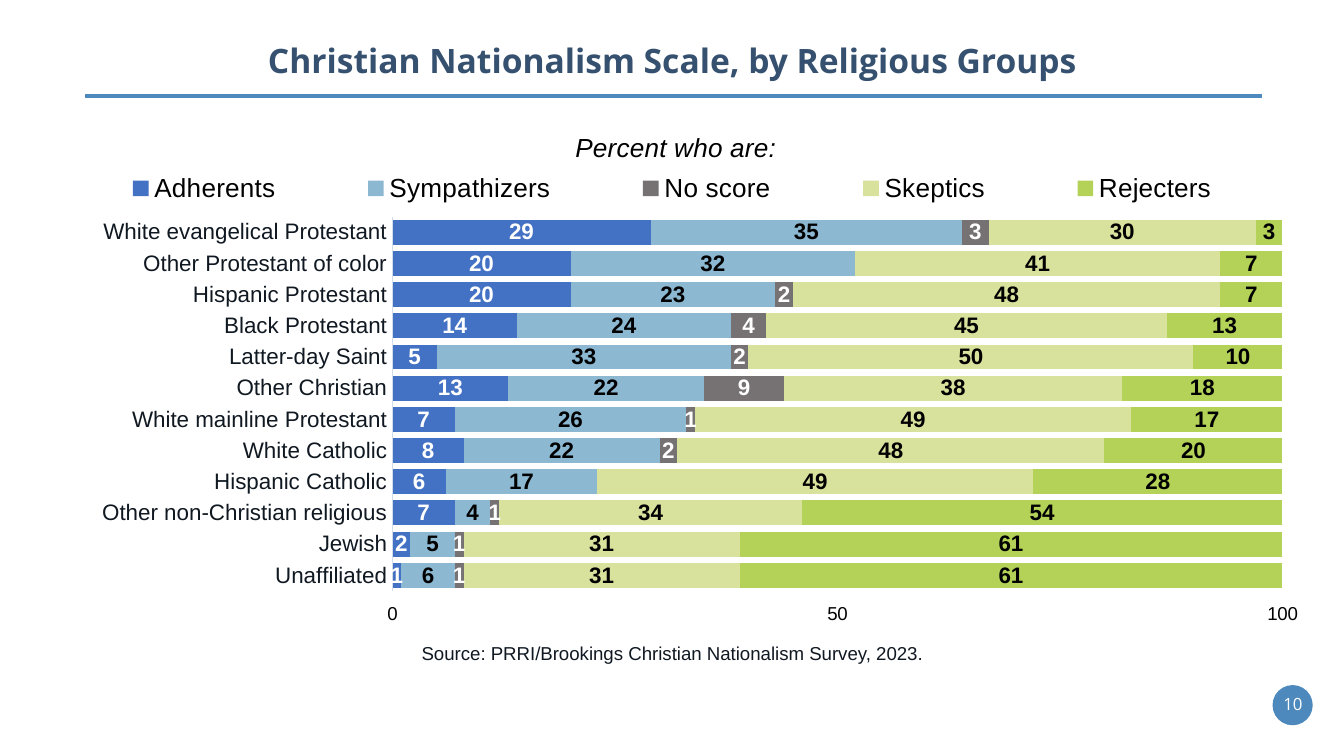
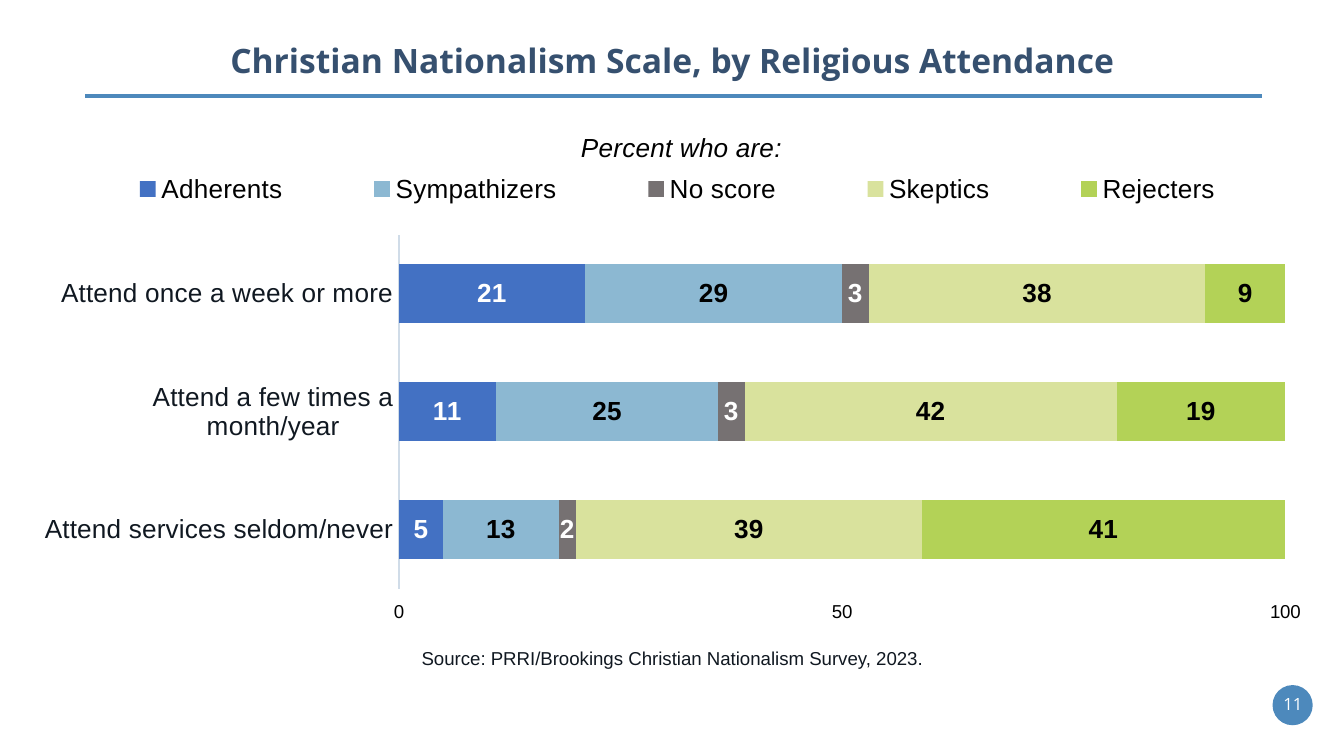
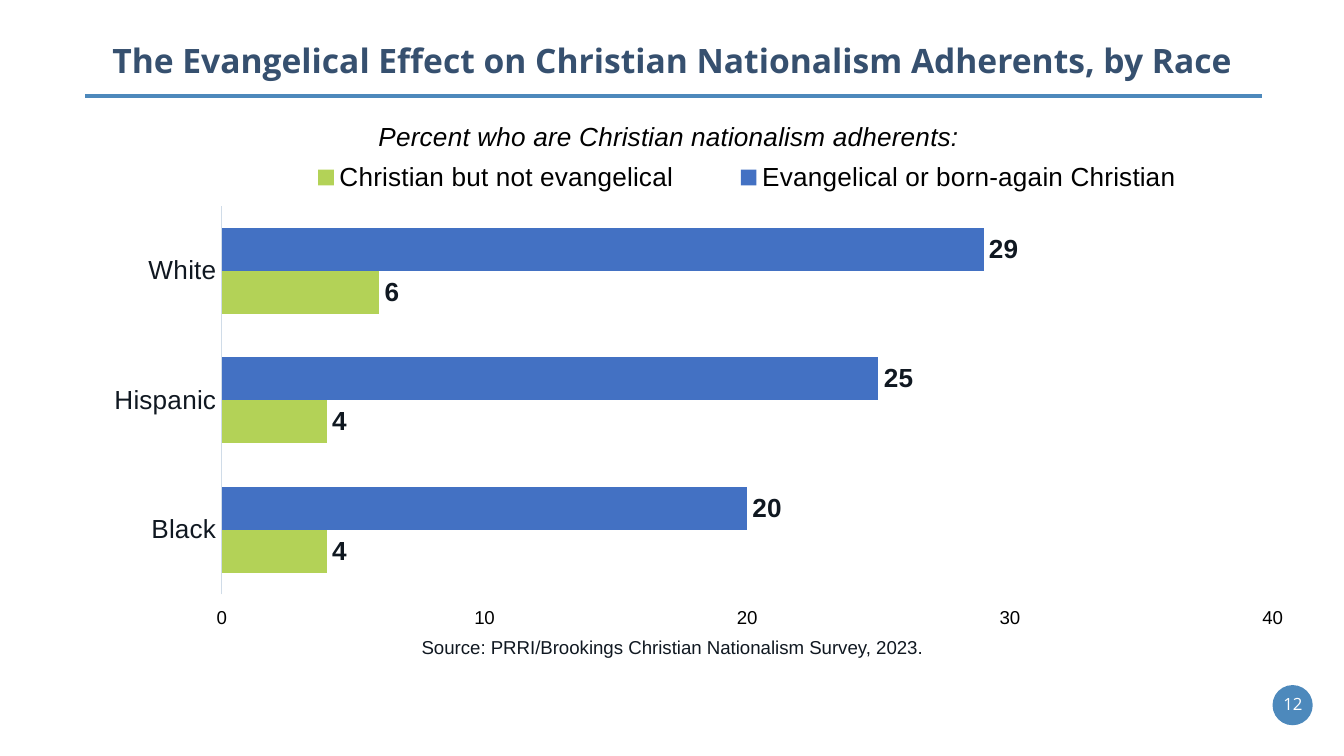
from lxml import etree
from pptx import Presentation
from pptx.chart.data import CategoryChartData
from pptx.dml.color import RGBColor
from pptx.enum import chart as ch, shapes, text
from pptx.oxml.ns import qn
from pptx.util import Cm, Pt

# Shared colours and fonts
WHITE = RGBColor(0xFF, 0xFF, 0xFF)
BLACK = RGBColor(0, 0, 0)
INK = RGBColor(0x10, 0x18, 0x21)
NAVY = RGBColor(0x36, 0x50, 0x6F)
STEEL = RGBColor(0x4D, 0x89, 0xBC)
AXIS = RGBColor(0xD0, 0xDC, 0xE8)
BLUE = RGBColor(0x43, 0x71, 0xC3)
SKY = RGBColor(0x8C, 0xB8, 0xD2)
GREY = RGBColor(0x76, 0x71, 0x72)
PALE_GREEN = RGBColor(0xD9, 0xE2, 0x9D)
GREEN = RGBColor(0xB3, 0xD2, 0x57)
HEAD_FONT, BODY_FONT = "Open Sans", "Arial"

SOURCE = "Source: PRRI/Brookings Christian Nationalism Survey, 2023."
CHART_BOX = (0.84, 2.06, 23.93, 10.8)

# Scale groups: name, bar colour, label colour
SCALE = [
    ("Adherents", BLUE, WHITE),
    ("Sympathizers", SKY, BLACK),
    ("No score", GREY, WHITE),
    ("Skeptics", PALE_GREEN, BLACK),
    ("Rejecters", GREEN, BLACK),
]
RELIGIOUS_GROUPS = {
    "White evangelical Protestant": (29, 35, 3, 30, 3),
    "Other Protestant of color": (20, 32, 0, 41, 7),
    "Hispanic Protestant": (20, 23, 2, 48, 7),
    "Black Protestant": (14, 24, 4, 45, 13),
    "Latter-day Saint": (5, 33, 2, 50, 10),
    "Other Christian": (13, 22, 9, 38, 18),
    "White mainline Protestant": (7, 26, 1, 49, 17),
    "White Catholic": (8, 22, 2, 48, 20),
    "Hispanic Catholic": (6, 17, 0, 49, 28),
    "Other non-Christian religious": (7, 4, 1, 34, 54),
    "Jewish": (2, 5, 1, 31, 61),
    "Unaffiliated": (1, 6, 1, 31, 61),
}
ATTENDANCE = {
    "Attend once a week or more": (21, 29, 3, 38, 9),
    "Attend a few times a month/year": (11, 25, 3, 42, 19),
    "Attend services seldom/never": (5, 13, 2, 39, 41),
}
EVANGELICAL = [
    ("Evangelical or born-again Christian", BLUE, INK),
    ("Christian but not evangelical", GREEN, INK),
]
RACES = {"White": (29, 6), "Hispanic": (25, 4), "Black": (20, 4)}


def set_font(font, size, color, name=BODY_FONT, bold=False, italic=False):
    font.size, font.name = Pt(size), name
    font.bold, font.italic = bold, italic
    font.color.rgb = color


def add_text(slide, box, words, anchor=text.MSO_ANCHOR.MIDDLE, insets=(0, 0),
             wrap=True, **fmt):
    sp = slide.shapes.add_textbox(*map(Cm, box))
    tf = sp.text_frame
    tf.word_wrap, tf.vertical_anchor = wrap, anchor
    tf.margin_left = tf.margin_right = Cm(insets[0])
    tf.margin_top = tf.margin_bottom = Cm(insets[1])
    p = tf.paragraphs[0]
    p.alignment = text.PP_ALIGN.CENTER
    r = p.add_run()
    r.text = words
    set_font(r.font, **fmt)


def add_frame(slide, title, number):
    # Title over a rule
    add_text(slide, (0.43, 0.69, 24.56, 0.89), title, insets=(0, 0.1),
             size=18, color=NAVY, name=HEAD_FONT, bold=True)
    rule = slide.shapes.add_connector(shapes.MSO_CONNECTOR.STRAIGHT,
                                      Cm(23.85), Cm(1.82), Cm(1.6), Cm(1.82))
    rule.line.color.rgb, rule.line.width = STEEL, Pt(2)
    etree.SubElement(rule._element.spPr, qn("a:effectLst"))
    # Page number badge
    badge = slide.shapes.add_shape(shapes.MSO_SHAPE.ROUNDED_RECTANGLE,
                                   Cm(24.05), Cm(12.95), Cm(0.76), Cm(0.76))
    badge.adjustments[0] = 0.5
    badge.shadow.inherit = False
    badge.fill.solid()
    badge.fill.fore_color.rgb = STEEL
    badge.line.fill.background()
    add_text(slide, (24.23, 13, 0.41, 0.61), str(number), wrap=False,
             size=9, color=WHITE, name=HEAD_FONT)


def place(part, index, inner=False, **fractions):
    """Give a chart part a fixed place, as fractions of the chart."""
    for old in part.findall(qn("c:layout")):
        part.remove(old)
    layout = etree.Element(qn("c:layout"))
    manual = etree.SubElement(layout, qn("c:manualLayout"))
    settings = [("layoutTarget", "inner")] if inner else []
    settings += [("xMode", "edge"), ("yMode", "edge"), *fractions.items()]
    for tag, value in settings:
        etree.SubElement(manual, qn("c:" + tag)).set("val", str(value))
    part.insert(index, layout)


def add_bars(slide, box, rows, groups, heading, title_at, legend_at, plot_at,
             stacked=True, gap=100, size=14, top=100, step=50):
    data = CategoryChartData()
    data.categories = list(rows)
    for (name, _, _), values in zip(groups, zip(*rows.values())):
        data.add_series(name, values)
    kind = ch.XL_CHART_TYPE.BAR_STACKED if stacked else ch.XL_CHART_TYPE.BAR_CLUSTERED
    chart = slide.shapes.add_chart(kind, *map(Cm, box), data).chart
    set_font(chart.font, 14, BLACK)

    # Heading and legend
    chart.has_title = True
    p = chart.chart_title.text_frame.paragraphs[0]
    r = p.add_run()
    r.text = heading
    set_font(r.font, 14, BLACK, italic=True)
    place(chart.chart_title._element, 1, **dict(zip("xy", title_at)))
    chart.has_legend = True
    legend = chart.legend
    legend.position = (ch.XL_LEGEND_POSITION.TOP if stacked
                       else ch.XL_LEGEND_POSITION.BOTTOM)
    legend.include_in_layout = False
    set_font(legend.font, 14, BLACK)
    place(legend._element, 1, **dict(zip("xywh", legend_at)))
    plot_area = chart._chartSpace.find(".//" + qn("c:plotArea"))
    place(plot_area, 0, inner=True, **dict(zip("xywh", plot_at)))

    # Axes: categories run downwards, so the high end is the bottom
    cat, val = chart.category_axis, chart.value_axis
    for axis in (cat, val):
        axis.major_tick_mark = axis.minor_tick_mark = ch.XL_TICK_MARK.NONE
        axis.has_major_gridlines = False
    cat.reverse_order = True
    cat.format.line.color.rgb, cat.format.line.width = AXIS, Pt(0.75)
    set_font(cat.tick_labels.font, size, INK)
    val.tick_label_position = ch.XL_TICK_LABEL_POSITION.HIGH
    val.minimum_scale, val.maximum_scale, val.major_unit = 0, top, step
    val.format.line.fill.background()
    set_font(val.tick_labels.font, 10, BLACK)

    # Bars and their labels; the number format hides zeros
    plot = chart.plots[0]
    plot.vary_by_categories = False
    plot.gap_width, plot.overlap = gap, 100 if stacked else 0
    for s, (_, fill, ink) in zip(plot.series, groups):
        s.format.fill.solid()
        s.format.fill.fore_color.rgb = fill
        labels = s.data_labels
        labels.show_value = True
        labels.number_format, labels.number_format_is_linked = "0;;", False
        labels.position = (ch.XL_LABEL_POSITION.CENTER if stacked
                           else ch.XL_LABEL_POSITION.OUTSIDE_END)
        set_font(labels.font, size, ink, bold=True)


def chart_slide(prs, number, title, source_top, box=CHART_BOX, **chart):
    slide = prs.slides.add_slide(prs.slide_layouts[6])
    add_frame(slide, title, number)
    add_bars(slide, box, **chart)
    add_text(slide, (7.52, source_top, 10.36, 0.69), SOURCE,
             anchor=text.MSO_ANCHOR.TOP, insets=(0.25, 0.13), size=10, color=INK)


def main():
    prs = Presentation()
    prs.slide_width, prs.slide_height = Cm(25.4), Cm(14.29)
    chart_slide(prs, 10, "Christian Nationalism Scale, by Religious Groups", 12.01,
                box=(0.69, 2.06, 24.03, 10.72),
                rows=RELIGIOUS_GROUPS, groups=SCALE, heading="Percent who are:",
                title_at=(0.42, 0.03), legend_at=(0.01, 0.1, 0.98, 0.08),
                plot_at=(0.28, 0.19, 0.7, 0.66), gap=25, size=12)
    chart_slide(prs, 11, "Christian Nationalism Scale, by Religious Attendance", 12.09,
                rows=ATTENDANCE, groups=SCALE, heading="Percent who are:",
                title_at=(0.42, 0.03), legend_at=(0.01, 0.1, 0.98, 0.08),
                plot_at=(0.28, 0.22, 0.7, 0.62))
    chart_slide(prs, 12,
                "The Evangelical Effect on Christian Nationalism Adherents, by Race", 11.89,
                rows=RACES, groups=EVANGELICAL,
                heading="Percent who are Christian nationalism adherents:",
                title_at=(0.26, 0.01), legend_at=(0.17, 0.08, 0.77, 0.08),
                plot_at=(0.14, 0.17, 0.83, 0.68), stacked=False, top=40, step=10)
    prs.save("out.pptx")


if __name__ == "__main__":
    main()
